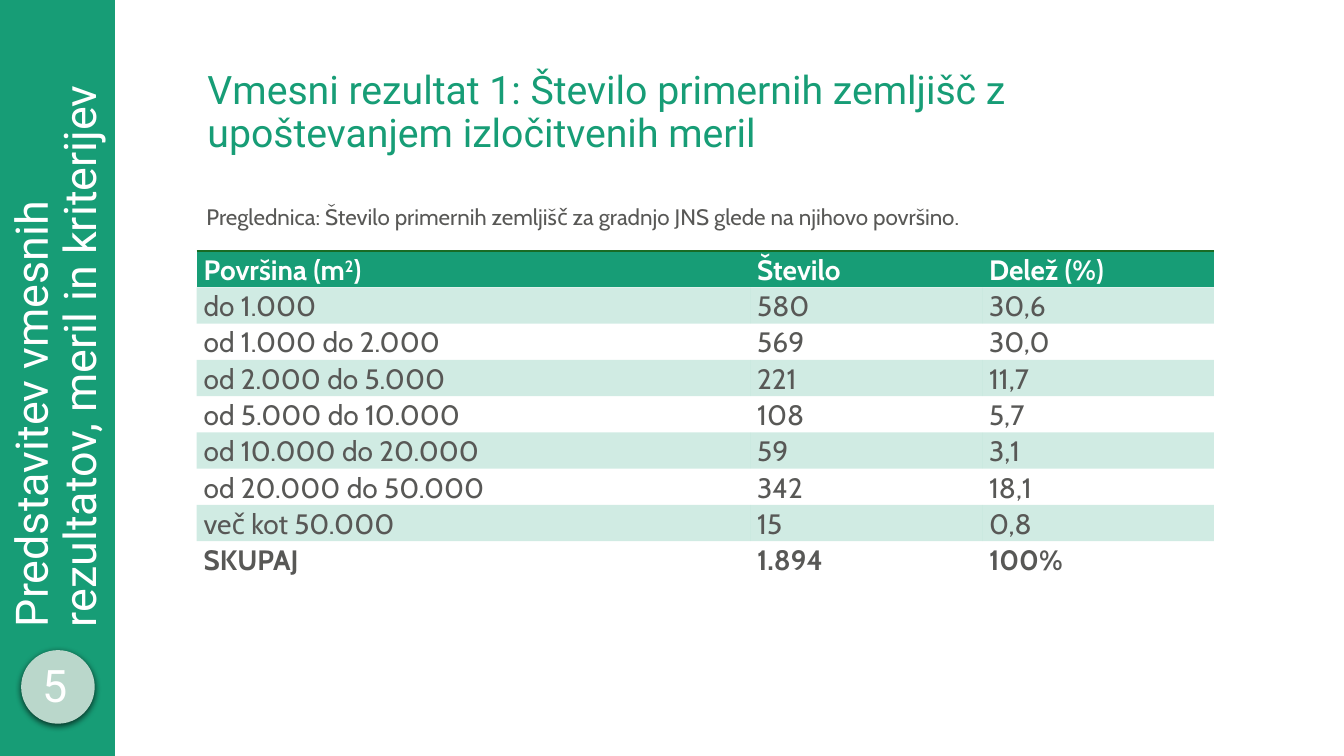
from lxml.etree import SubElement
from pptx import Presentation
from pptx.dml.color import RGBColor
from pptx.enum.shapes import MSO_SHAPE as Shape
from pptx.enum.text import MSO_ANCHOR as Anchor, PP_ALIGN as Align
from pptx.oxml import parse_xml
from pptx.oxml.ns import nsdecls, qn
from pptx.util import Inches, Pt

GREEN, PALE, WHITE, GREY = "179D76", "BAD7CB", "FFFFFF", "585856"
NO_GRID_STYLE = "{2D5ABB26-0587-4C30-8999-92F81FD0307C}"
COLUMN_WIDTHS = [5.49, 2.3, 2.3]
ROW_HEIGHT = 0.36
ROWS = [
    ["Površina (m^2^)", "Število", "Delež (%)"],
    ["do 1.000", "580", "30,6"],
    ["od 1.000 do 2.000", "569", "30,0"],
    ["od 2.000 do 5.000", "221", "11,7"],
    ["od 5.000 do 10.000", "108", "5,7"],
    ["od 10.000 do 20.000", "59", "3,1"],
    ["od 20.000 do 50.000", "342", "18,1"],
    ["več kot 50.000", "15", "0,8"],
    ["SKUPAJ", "1.894", "100%"],
]


def color(value):
    return RGBColor.from_string(value)


def apply(target, values):
    for name, value in values.items():
        setattr(target, name, value)


def write(para, text, size, font, tint, bold=False, **layout):
    apply(para, layout)
    for index, part in enumerate(text.split("^")):
        span = para.add_run()
        span.text = part
        apply(span.font, {"size": Pt(size), "name": font, "bold": bold})
        span.font.color.rgb = color(tint)
        if index % 2:
            span._r.get_or_add_rPr().set("baseline", "30000")


def add_text(page, place, text, size, font, tint, anchor=Anchor.MIDDLE, turn=0, **layout):
    box = page.shapes.add_textbox(*map(Inches, place))
    box.rotation = turn
    apply(box.text_frame, {"word_wrap": True, "vertical_anchor": anchor})
    write(box.text_frame.paragraphs[0], text, size, font, tint, **layout)


def add_block(page, kind, place, tint):
    block = page.shapes.add_shape(kind, *map(Inches, place))
    block.shadow.inherit = False
    block.fill.solid()
    block.fill.fore_color.rgb = color(tint)
    block.line.fill.background()
    return block


def add_shadow(block):
    effects = block._element.spPr.find(qn("a:effectLst"))
    effects.append(parse_xml(
        f'<a:outerShdw {nsdecls("a")} blurRad="{Pt(4.5)}" dist="{Pt(1.5)}" dir="5400000" '
        'rotWithShape="0"><a:srgbClr val="000000"><a:alpha val="63000"/></a:srgbClr></a:outerShdw>'))


def fill_cell(cell, row):
    if row and row % 2 == 0:
        cell.fill.background()
        return
    cell.fill.solid()
    cell.fill.fore_color.rgb = color(GREEN)
    properties = cell._tc.get_or_add_tcPr()
    if row:
        SubElement(next(properties.iter(qn("a:srgbClr"))), qn("a:alpha"), val="20000")
    else:
        properties.insert(0, parse_xml(
            f'<a:lnT {nsdecls("a")} w="{Pt(1)}"><a:solidFill><a:srgbClr val="196B24"/>'
            '</a:solidFill></a:lnT>'))


def add_area_table(page):
    last = len(ROWS) - 1
    place = (1.95, 2.49, sum(COLUMN_WIDTHS), ROW_HEIGHT * len(ROWS))
    frame = page.shapes.add_table(len(ROWS), len(COLUMN_WIDTHS), *map(Inches, place))
    table = frame.table
    table._tbl.tblPr.find(qn("a:tableStyleId")).text = NO_GRID_STYLE
    for column, width in zip(table.columns, COLUMN_WIDTHS):
        column.width = Inches(width)
    margins = {"margin_left": Inches(0.07), "margin_right": Inches(0.07),
               "margin_top": 0, "margin_bottom": 0}
    for row, texts in enumerate(ROWS):
        table.rows[row].height = Inches(ROW_HEIGHT)
        for column, text in enumerate(texts):
            cell = table.cell(row, column)
            apply(cell, margins)
            fill_cell(cell, row)
            write(cell.text_frame.paragraphs[0], text, 20, "Cabin", GREY if row else WHITE,
                  bold=row in (0, last), line_spacing=1.07, space_after=Pt(8))


def main():
    deck = Presentation()
    apply(deck, {"slide_width": Inches(13.33), "slide_height": Inches(7.5)})
    page = deck.slides.add_slide(deck.slide_layouts[6])
    add_text(page, (1.96, 0.4, 10.46, 1.45),
             "Vmesni rezultat 1: Število primernih zemljišč z upoštevanjem izločitvenih meril",
             28, "Roboto", GREEN, line_spacing=0.9)
    add_block(page, Shape.RECTANGLE, (0, 0, 1.14, 7.5), GREEN)
    add_shadow(add_block(page, Shape.OVAL, (0.21, 6.45, 0.73, 0.73), PALE))
    add_text(page, (0.18, 6.47, 0.74, 0.64), "5", 32, "Roboto", WHITE, alignment=Align.CENTER)
    add_text(page, (1.95, 2, 11, 0.34),
             "Preglednica: Število primernih zemljišč za gradnjo JNS glede na njihovo površino.",
             16, "Cabin", GREY, anchor=Anchor.TOP, line_spacing=0.9)
    add_area_table(page)
    add_text(page, (-2.59, 2.59, 6.32, 1.14),
             "Predstavitev vmesnih rezultatov, meril in kriterijev",
             32, "Roboto", WHITE, turn=270, line_spacing=0.9)
    deck.save("out.pptx")


if __name__ == "__main__":
    main()
